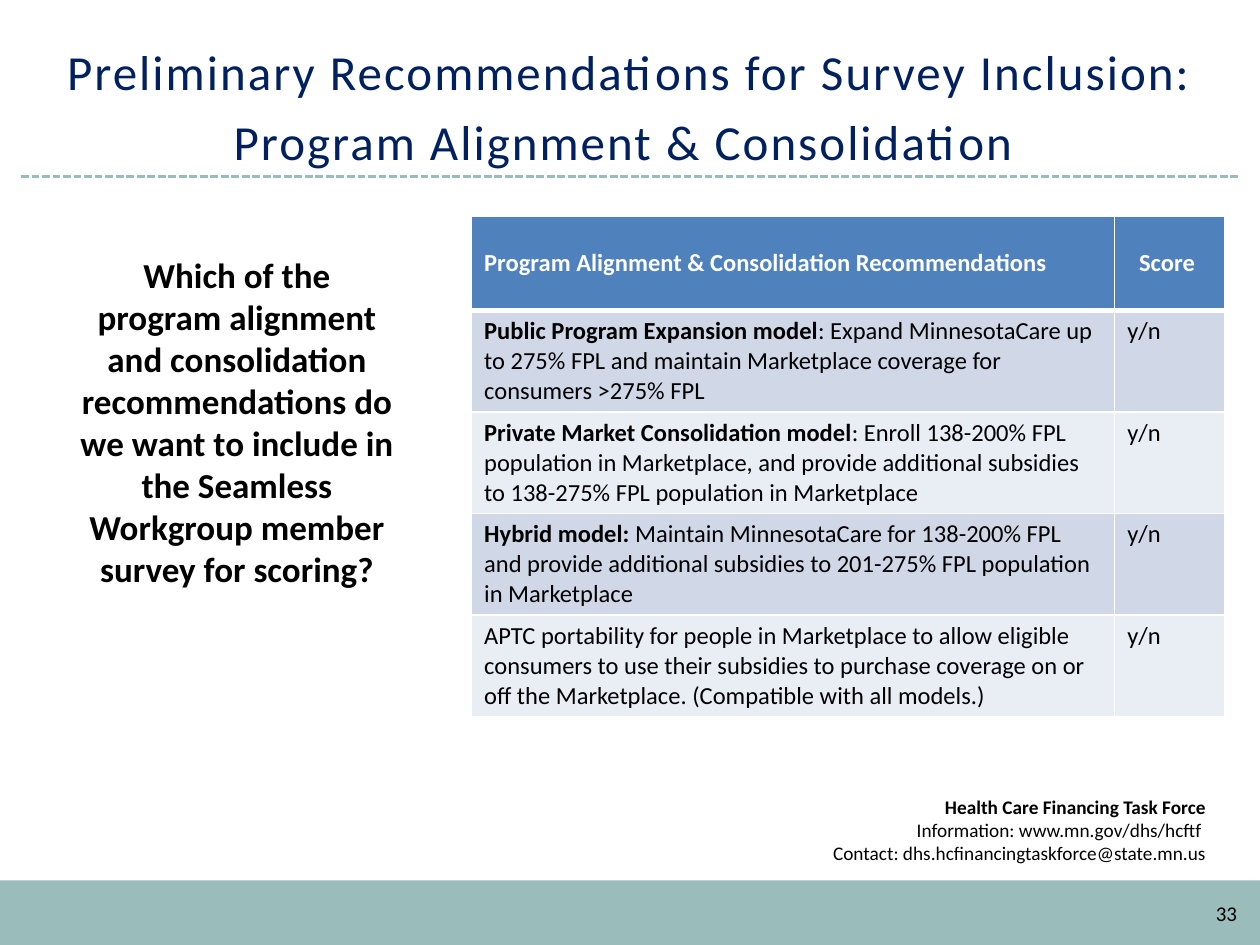
from dataclasses import dataclass

import pptx
import pptx.dml.color
import pptx.enum.dml
import pptx.enum.shapes
import pptx.enum.text
import pptx.oxml
import pptx.oxml.ns
import pptx.util

Pt = pptx.util.Pt
RGBColor = pptx.dml.color.RGBColor
Align = pptx.enum.text.PP_ALIGN
Anchor = pptx.enum.text.MSO_ANCHOR
AutoSize = pptx.enum.text.MSO_AUTO_SIZE

FONT = "Calibri"
BLACK = RGBColor(0x00, 0x00, 0x00)
WHITE = RGBColor(0xFF, 0xFF, 0xFF)
NAVY = RGBColor(0x00, 0x20, 0x60)
SAGE = RGBColor(0x9A, 0xBC, 0xBB)
HEADER_BLUE = RGBColor(0x4F, 0x81, 0xBD)
BAND_COLORS = (RGBColor(0xD0, 0xD8, 0xE8), RGBColor(0xE9, 0xED, 0xF4))


@dataclass(frozen=True)
class Box:
    left: float
    top: float
    width: float
    height: float

    def lengths(self) -> tuple:
        return Pt(self.left), Pt(self.top), Pt(self.width), Pt(self.height)


@dataclass(frozen=True)
class TextStyle:
    size: float
    color: RGBColor = BLACK
    bold: bool = False
    align: Align = Align.LEFT


@dataclass(frozen=True)
class Recommendation:
    model: str
    description: str
    score: str = "y/n"


RECOMMENDATIONS = (
    Recommendation(
        "Public Program Expansion model",
        ": Expand MinnesotaCare up to 275% FPL and maintain Marketplace "
        "coverage for consumers >275% FPL"),
    Recommendation(
        "Private Market Consolidation model",
        ": Enroll 138-200% FPL population in Marketplace, and provide "
        "additional subsidies to 138-275% FPL population in Marketplace"),
    Recommendation(
        "Hybrid model: ",
        "Maintain MinnesotaCare for 138-200% FPL and provide additional "
        "subsidies to 201-275% FPL population in Marketplace"),
    Recommendation(
        "",
        "APTC portability for people in Marketplace to allow eligible consumers "
        "to use their subsidies to purchase coverage on or off the Marketplace. "
        "(Compatible with all models.)"),
)
HEADERS = ("Program Alignment & Consolidation Recommendations", "Score ")
COLUMN_WIDTHS = (367.5, 63)
HEADER_HEIGHT, ROW_HEIGHT = 54, 58

HEADER_STYLE = TextStyle(14, WHITE, bold=True)
CELL_STYLE = TextStyle(14)


def style_paragraph(paragraph, style: TextStyle) -> None:
    paragraph.alignment = style.align
    font = paragraph.font
    font.name, font.size, font.bold = FONT, Pt(style.size), style.bold
    font.color.rgb = style.color


def add_rectangle(slide, box: Box, color: RGBColor):
    shape = slide.shapes.add_shape(
        pptx.enum.shapes.MSO_SHAPE.RECTANGLE, *box.lengths())
    shape.shadow.inherit = False
    shape.fill.solid()
    shape.fill.fore_color.rgb = color
    shape.line.fill.background()
    return shape


def add_text(slide, box: Box, text: str, style: TextStyle, anchor: Anchor) -> None:
    frame = slide.shapes.add_textbox(*box.lengths()).text_frame
    frame.word_wrap = True
    frame.vertical_anchor = anchor
    frame.text = text
    style_paragraph(frame.paragraphs[0], style)


def add_title(slide) -> None:
    title = slide.shapes.title
    title.left, title.top, title.width, title.height = Box(24, 18, 672, 82.8).lengths()
    frame = title.text_frame
    frame.auto_size = AutoSize.NONE
    frame.vertical_anchor = Anchor.BOTTOM
    frame.text = ("Preliminary Recommendations for Survey Inclusion: "
                  "Program Alignment & Consolidation ")
    paragraph = frame.paragraphs[0]
    style_paragraph(paragraph, TextStyle(28, NAVY, align=Align.CENTER))
    paragraph.line_spacing = Pt(40)
    paragraph.runs[0].font._element.set("spc", "120")


def add_divider(slide) -> None:
    line = slide.shapes.add_connector(
        pptx.enum.shapes.MSO_CONNECTOR.STRAIGHT, Pt(12), Pt(100.8), Pt(708), Pt(100.8))
    line.line.color.rgb = SAGE
    line.line.width = Pt(1.5)
    line.line.dash_style = pptx.enum.dml.MSO_LINE.SQUARE_DOT
    line._element.spPr.append(pptx.oxml.parse_xml(
        f"<a:effectLst {pptx.oxml.ns.nsdecls('a')}/>"))


def add_contact(slide) -> None:
    frame = add_rectangle(slide, Box(327, 450.7, 369.3, 48), WHITE).text_frame
    frame.word_wrap = True
    frame.auto_size = AutoSize.SHAPE_TO_FIT_TEXT
    frame.vertical_anchor = Anchor.TOP
    frame.text = ("Health Care Financing Task Force\n"
                  "Information: www.mn.gov/dhs/hcftf \n"
                  "Contact: dhs.hcfinancingtaskforce@state.mn.us")
    for index, paragraph in enumerate(frame.paragraphs):
        style_paragraph(paragraph, TextStyle(11, bold=index == 0, align=Align.RIGHT))


def format_cell(cell, fill: RGBColor, anchor: Anchor, top: float, bottom: float) -> None:
    """Fill the cell and give it white borders, top and bottom in points."""
    cell.fill.solid()
    cell.fill.fore_color.rgb = fill
    cell.vertical_anchor = anchor
    properties = cell._tc.get_or_add_tcPr()
    widths = {"lnL": 1, "lnR": 1, "lnT": top, "lnB": bottom}
    for position, (side, width) in enumerate(widths.items()):
        properties.insert(position, pptx.oxml.parse_xml(
            f"<a:{side} {pptx.oxml.ns.nsdecls('a')} w='{Pt(width)}'>"
            f"<a:solidFill><a:srgbClr val='{WHITE}'/></a:solidFill></a:{side}>"))


def add_recommendations(slide) -> None:
    count = len(RECOMMENDATIONS)
    box = Box(269.5, 123.3, sum(COLUMN_WIDTHS), HEADER_HEIGHT + count * ROW_HEIGHT)
    table = slide.shapes.add_table(count + 1, len(HEADERS), *box.lengths()).table
    for column, width in zip(table.columns, COLUMN_WIDTHS):
        column.width = Pt(width)
    for index, row in enumerate(table.rows):
        row.height = Pt(ROW_HEIGHT if index else HEADER_HEIGHT)

    for column, header in enumerate(HEADERS):
        cell = table.cell(0, column)
        cell.text = header
        style_paragraph(cell.text_frame.paragraphs[0], HEADER_STYLE)
        format_cell(cell, HEADER_BLUE, Anchor.MIDDLE, top=1, bottom=3)
    table.cell(0, 1).text_frame.paragraphs[0].alignment = Align.CENTER

    for row, item in enumerate(RECOMMENDATIONS, start=1):
        text_cell, score_cell = table.cell(row, 0), table.cell(row, 1)
        paragraph = text_cell.text_frame.paragraphs[0]
        if item.model:
            run = paragraph.add_run()
            run.text, run.font.bold = item.model, True
        paragraph.add_run().text = item.description
        score_cell.text = item.score
        for cell, anchor in ((text_cell, Anchor.MIDDLE), (score_cell, Anchor.TOP)):
            style_paragraph(cell.text_frame.paragraphs[0], CELL_STYLE)
            format_cell(cell, BAND_COLORS[(row - 1) % 2], anchor,
                        top=3 if row == 1 else 1, bottom=1)


def main() -> None:
    presentation = pptx.Presentation()
    presentation.slide_width, presentation.slide_height = Pt(720), Pt(540)
    slide = presentation.slides.add_slide(presentation.slide_layouts[5])
    add_rectangle(slide, Box(0, 503, 720, 37), SAGE)
    add_divider(slide)
    add_contact(slide)
    add_title(slide)
    add_text(slide, Box(38.2, 177.8, 194.4, 162.7),
             "Which of the program alignment and consolidation recommendations do we "
             "want to include in the Seamless Workgroup member survey for scoring?",
             TextStyle(20, bold=True, align=Align.CENTER), Anchor.BOTTOM)
    add_recommendations(slide)
    add_text(slide, Box(672, 507, 42, 29), "33",
             TextStyle(12, align=Align.RIGHT), Anchor.MIDDLE)
    presentation.save("out.pptx")


if __name__ == "__main__":
    main()
